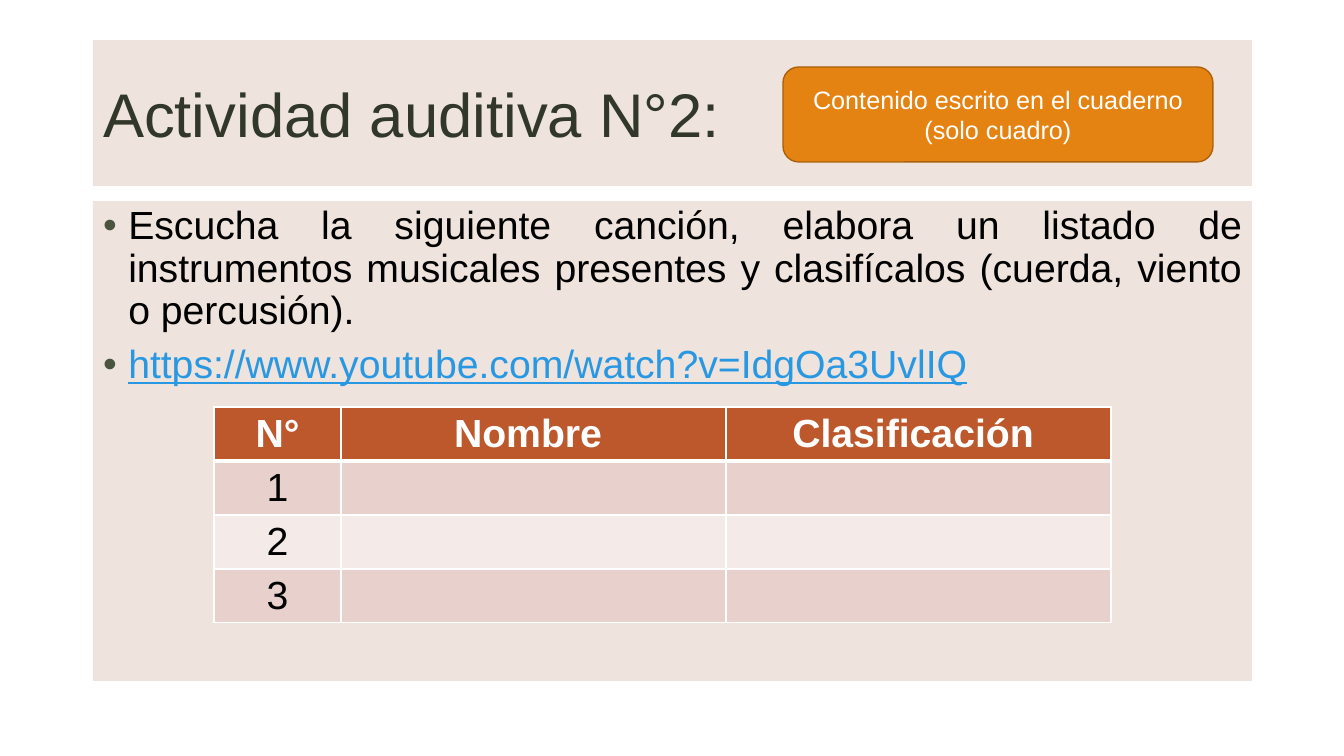
from lxml import etree
from pptx import Presentation
from pptx import util as u
from pptx.dml.color import RGBColor
from pptx.enum import shapes, text
from pptx.oxml import ns

WHITE = RGBColor(0xFF, 0xFF, 0xFF)
BLACK = RGBColor(0, 0, 0)
OLIVE = RGBColor(0x31, 0x38, 0x29)
BULLET = RGBColor(0x4A, 0x54, 0x3E)
PANEL = RGBColor(0xEB, 0xDC, 0xD5)
LINK = RGBColor(0x29, 0x98, 0xE3)
ORANGE = RGBColor(0xE4, 0x83, 0x12)
BROWN = RGBColor(0xA9, 0x61, 0x0D)
HEADER = RGBColor(0xBD, 0x58, 0x2C)
BANDS = RGBColor(0xE8, 0xD1, 0xCD), RGBColor(0xF4, 0xEA, 0xE8)


def px(n):
    return u.Emu(round(n * 914400 / 100.8))


def sub(parent, tag, **attrs):
    return etree.SubElement(parent, ns.qn(tag), attrs)


class SlideBuilder:
    """Holds the style and the current slide, and adds each kind of element."""

    font = "Arial"

    def __init__(self, prs):
        self.s = prs.slides.add_slide(prs.slide_layouts[1])

    def add_text(self, p, words, align, color, **fmt):
        p.alignment = align
        r = p.add_run()
        r.text = words
        for name, value in {"name": self.font, **fmt}.items():
            setattr(r.font, name, value)
        r.font.color.rgb = color

    def panel(self, sp, box, anchor):
        for name, n in zip(("left", "top", "width", "height"), box):
            setattr(sp, name, px(n))
        sp.fill.solid()
        sp.fill.fore_color.rgb = PANEL
        color = sp.element.spPr.find(".//" + ns.qn("a:srgbClr"))
        sub(color, "a:alpha", val="80000")
        tf = sp.text_frame
        for name, value in {"word_wrap": True, "vertical_anchor": anchor,
                            "auto_size": text.MSO_AUTO_SIZE.NONE}.items():
            setattr(tf, name, value)
        return tf

    def title(self, words, box):
        tf = self.panel(self.s.shapes.title, box, text.MSO_ANCHOR.MIDDLE)
        self.add_text(tf.paragraphs[0], words, text.PP_ALIGN.LEFT, OLIVE, size=u.Pt(44))

    def bullets(self, items, box):
        tf = self.panel(self.s.placeholders[1], box, text.MSO_ANCHOR.TOP)
        for i, (words, fmt) in enumerate(items):
            p = tf.add_paragraph() if i else tf.paragraphs[0]
            pPr = p._p.get_or_add_pPr()
            pPr.set("marL", str(u.Inches(0.25)))
            pPr.set("indent", str(-u.Inches(0.25)))
            sub(sub(pPr, "a:buClr"), "a:srgbClr", val=str(BULLET))
            sub(pPr, "a:buFont", typeface=self.font)
            sub(pPr, "a:buChar", char="•")
            p.line_spacing = 0.9
            p.space_before = u.Pt(8.5 if i else 0)
            self.add_text(p, words, text.PP_ALIGN.JUSTIFY, size=u.Pt(28), **fmt)

    def borders(self, cell, top, bottom):
        tcPr = cell._tc.get_or_add_tcPr()
        for side, pt in zip("LRTB", (1, 1, top, bottom)):
            ln = sub(tcPr, "a:ln" + side, w=str(u.Pt(pt)))
            sub(sub(ln, "a:solidFill"), "a:srgbClr", val=str(WHITE))

    def table(self, rows, left, top, widths, row_height):
        tbl = self.s.shapes.add_table(len(rows), len(widths), px(left), px(top),
                                      px(sum(widths)), px(row_height * len(rows))).table
        for col, width in zip(tbl.columns, widths):
            col.width = px(width)
        for i, row in enumerate(rows):
            for j, words in enumerate(row):
                cell = tbl.cell(i, j)
                self.borders(cell, 3 if i == 1 else 1, 1 if i else 3)
                cell.fill.solid()
                cell.fill.fore_color.rgb = BANDS[(i - 1) % 2] if i else HEADER
                if words:
                    self.add_text(cell.text_frame.paragraphs[0], words, text.PP_ALIGN.CENTER,
                                  BLACK if i else WHITE, size=u.Pt(28), bold=i == 0)

    def badge(self, words, box):
        sp = self.s.shapes.add_shape(shapes.MSO_SHAPE.ROUNDED_RECTANGLE, *map(px, box))
        sp.shadow.inherit = False
        sp.fill.solid()
        sp.fill.fore_color.rgb = ORANGE
        sp.line.color.rgb = BROWN
        sp.line.width = u.Pt(1)
        tf = sp.text_frame
        tf.word_wrap = True
        tf.vertical_anchor = text.MSO_ANCHOR.MIDDLE
        self.add_text(tf.paragraphs[0], words, text.PP_ALIGN.CENTER, WHITE, size=u.Pt(18))


def main():
    prs = Presentation()
    prs.slide_width, prs.slide_height = px(1344), px(756)
    b = SlideBuilder(prs)
    b.title("Actividad auditiva N°2:", (93, 40, 1159, 146))
    b.bullets([
        ("Escucha la siguiente canción, elabora un listado de instrumentos musicales "
         "presentes y clasifícalos (cuerda, viento o percusión). ", {"color": BLACK}),
        ("https://www.youtube.com/watch?v=IdgOa3UvlIQ", {"color": LINK, "underline": True}),
    ], (93, 201, 1159, 480))
    b.table([("N°", "Nombre ", "Clasificación "), *((str(n), "", "") for n in range(1, 4))],
            214, 407, (127, 385, 385), 54)
    b.badge("Contenido escrito en el cuaderno (solo cuadro)", (783, 67, 430, 95))
    prs.save("out.pptx")


if __name__ == "__main__":
    main()
